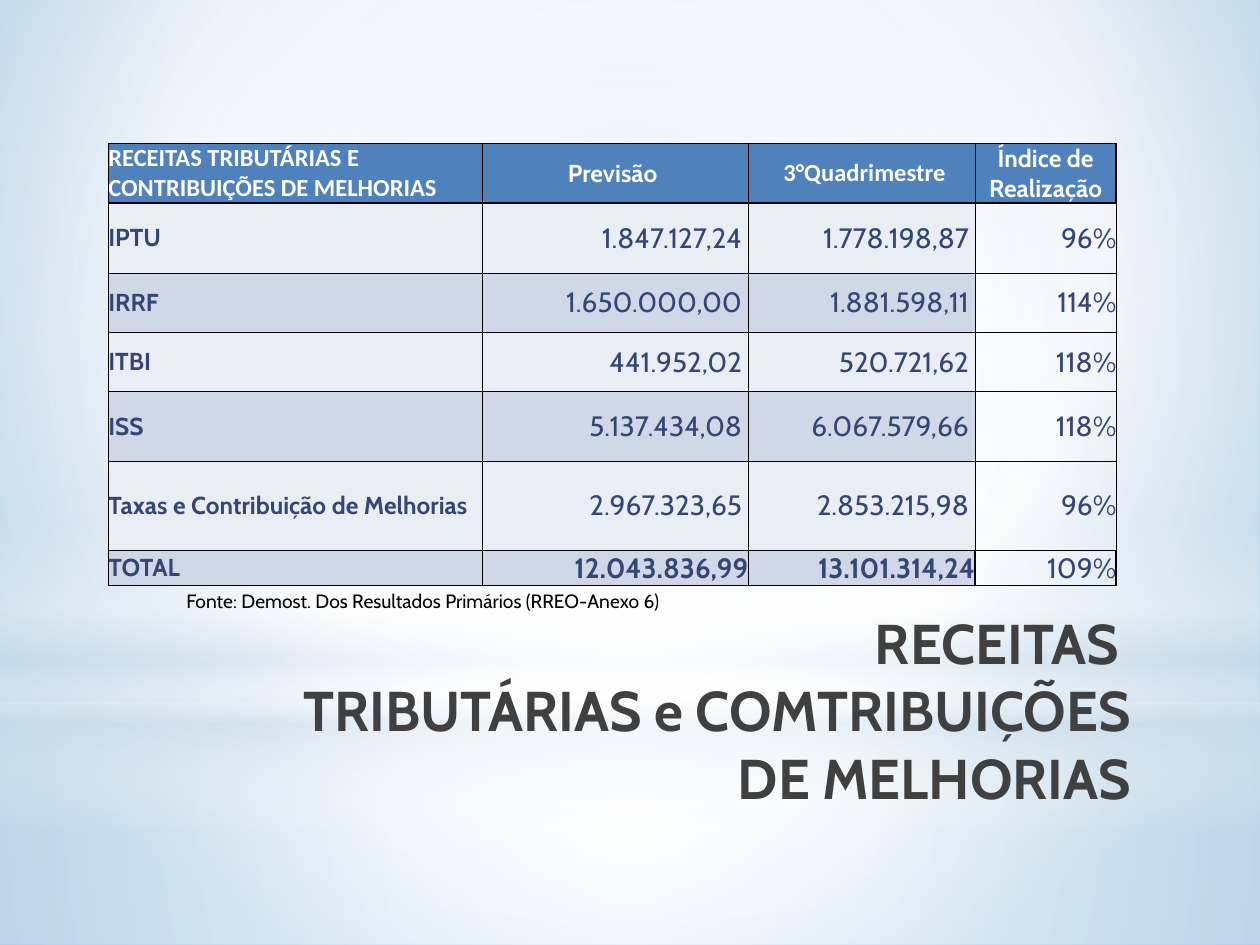
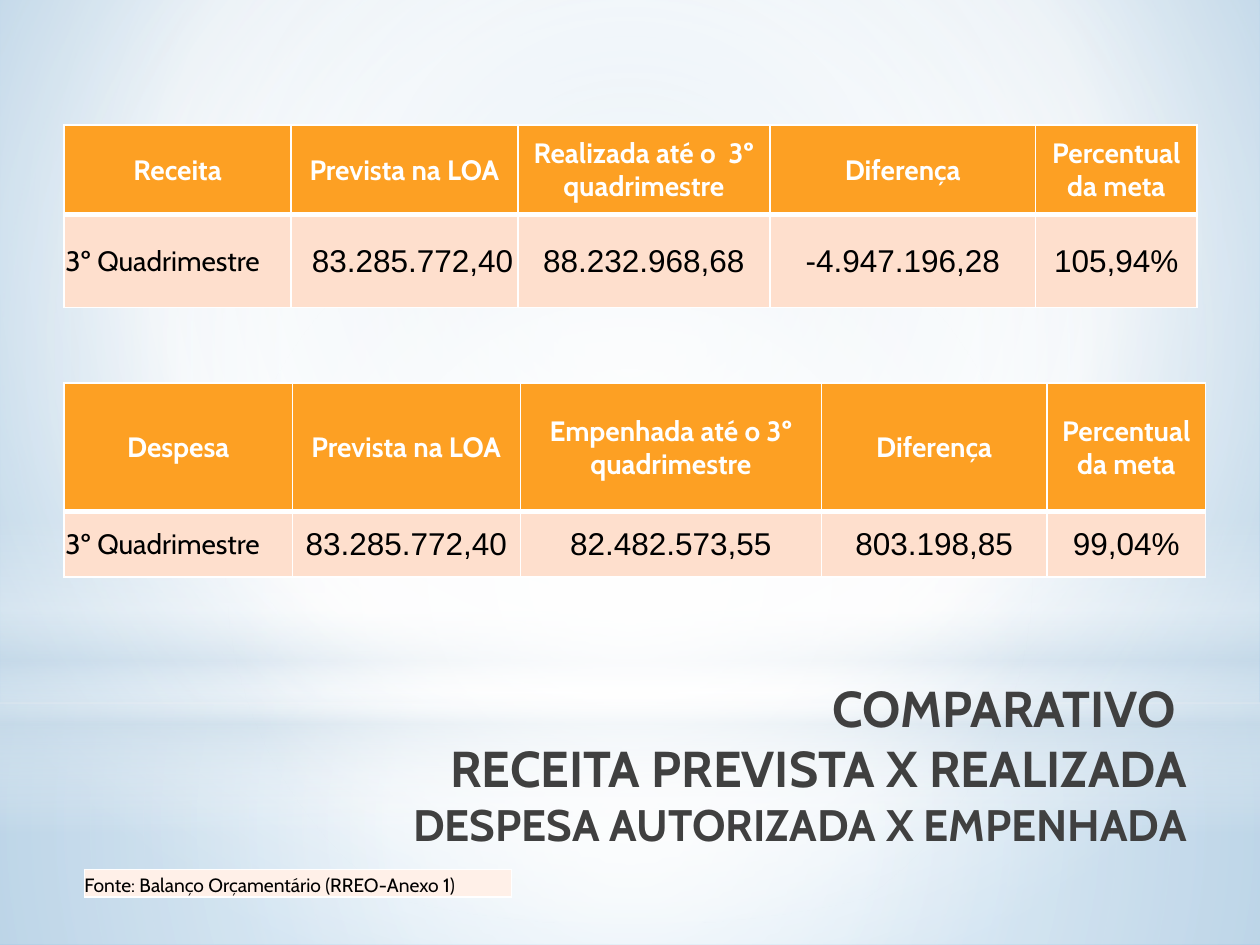
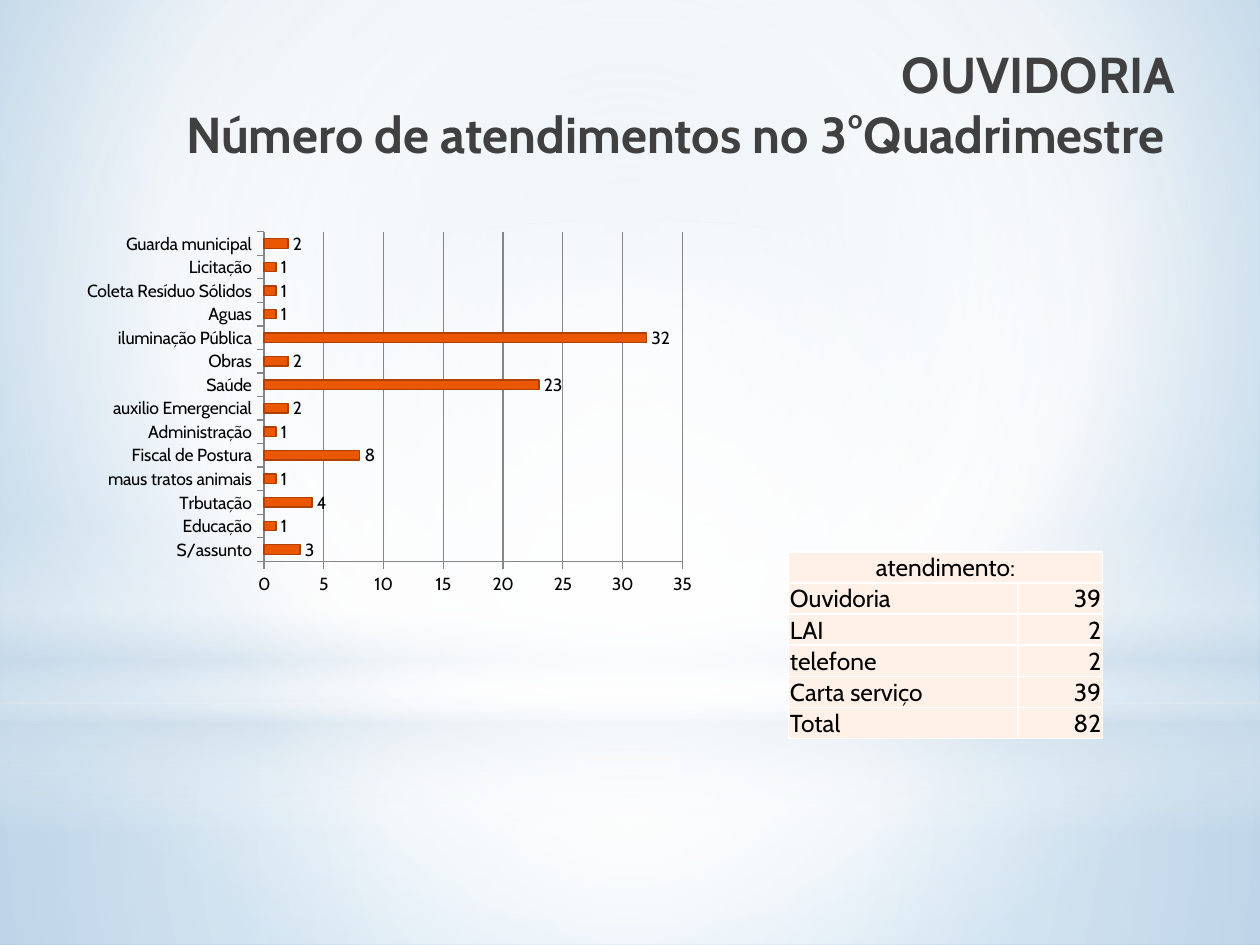
from dataclasses import dataclass

from lxml.etree import SubElement
from pptx import Presentation
from pptx.chart.data import CategoryChartData
from pptx.dml.color import RGBColor
from pptx.enum.chart import XL_CHART_TYPE, XL_LABEL_POSITION, XL_TICK_MARK
from pptx.enum.shapes import MSO_SHAPE
from pptx.enum.text import MSO_ANCHOR, MSO_AUTO_SIZE, PP_ALIGN
from pptx.oxml.ns import qn
from pptx.util import Inches, Pt

COLORS = {
    "white": "FFFFFF", "black": "000000", "title": "404040",
    "sky": "BCD5E8", "deep_sky": "82B6DE", "mist": "CCDDEA",
    "blue": "4F81BD", "navy": "354675", "blue_light": "E9EDF4", "blue_mid": "D0D8E8",
    "orange": "FDA023", "peach": "FEDFCD", "cream": "FFF0E8",
    "bar": "EB5600", "bar_edge": "B04000", "grid": "868686",
}
FONT = "Cabin"
CENTRE = (50, 50, 50, 50)
LEFT, MIDDLE, RIGHT = PP_ALIGN.LEFT, PP_ALIGN.CENTER, PP_ALIGN.RIGHT


@dataclass
class CellStyle:
    """Look of one table cell; edges are left, right, top, bottom widths in points."""
    fill: str = ""
    size: float = 14
    color: str = "black"
    font: str = FONT
    bold: bool = False
    align: PP_ALIGN = LEFT
    anchor: MSO_ANCHOR = MSO_ANCHOR.MIDDLE
    edge_color: str = "white"
    edges: tuple = (1, 1, 1, 1)


def rgb(name):
    return RGBColor.from_string(COLORS[name])


def format_font(font, size, color="black", bold=False, name=FONT):
    font.name, font.size, font.bold = name, Pt(size), bold
    font.color.rgb = rgb(color)


def paint_gradient(fill, holder, stops, focus=None):
    """Fill with (position, colour, opacity) stops: around focus, or downwards without it."""
    fill.gradient()
    gradient = holder.find(".//" + qn("a:gradFill"))
    for child in list(gradient):
        gradient.remove(child)
    stop_list = SubElement(gradient, qn("a:gsLst"))
    for position, color, opacity in stops:
        stop = SubElement(stop_list, qn("a:gs"), pos=str(position * 1000))
        tint = SubElement(stop, qn("a:srgbClr"), val=COLORS[color])
        if opacity < 100:
            SubElement(tint, qn("a:alpha"), val=str(opacity * 1000))
    if focus:
        around = SubElement(gradient, qn("a:path"), path="circle")
        sides = {side: str(value * 1000) for side, value in zip("ltrb", focus)}
        SubElement(around, qn("a:fillToRect"), **sides)
    else:
        SubElement(gradient, qn("a:lin"), ang="5400000", scaled="0")


def style_master(deck, page):
    """Give the master its background, light bands and title style."""
    master = deck.slide_master
    paint_gradient(master.background.fill, master.element,
                   [(0, "sky", 100), (60, "white", 100), (100, "deep_sky", 100)],
                   (20, 10, 20, 60))
    bands = [
        (MSO_SHAPE.RECTANGLE, 5.58, 1.92, CENTRE,
         [(0, "white", 91), (37, "white", 76), (100, "mist", 79)]),
        (MSO_SHAPE.RECTANGLE, 0, 5.58, CENTRE,
         [(0, "white", 89), (48, "white", 62), (100, "mist", 79)]),
        (MSO_SHAPE.RECTANGLE, 4.12, 2.5, None,
         [(0, "white", 0), (29, "white", 30), (45, "mist", 40),
          (55, "white", 26), (65, "mist", 60), (100, "white", 0)]),
        (MSO_SHAPE.OVAL, 1.75, 5.58, CENTRE, [(0, "white", 100), (56, "white", 0)]),
    ]
    tree = master.element.cSld.spTree
    for order, (kind, top, height, focus, stops) in enumerate(bands):
        band = page.shapes.add_shape(kind, 0, Inches(top), deck.slide_width, Inches(height))
        band.shadow.inherit = False
        band.line.fill.background()
        paint_gradient(band.fill, band.element, stops, focus)
        tree.insert(2 + order, band.element)

    level = master.element.find(".//" + qn("p:titleStyle")).find(qn("a:lvl1pPr"))
    level.set("algn", "r")
    letters = level.find(qn("a:defRPr"))
    letters.set("sz", "2880")
    letters.set("b", "1")
    letters.find(qn("a:latin")).set("typeface", FONT)
    solid = letters.find(qn("a:solidFill"))
    solid.remove(solid[0])
    SubElement(solid, qn("a:srgbClr"), val=COLORS["title"])


def set_title(page, text, left, top, width, height):
    title = page.shapes.title
    title.left, title.top = Inches(left), Inches(top)
    title.width, title.height = Inches(width), Inches(height)
    frame = title.text_frame
    frame.text = text
    frame.vertical_anchor = MSO_ANCHOR.TOP
    frame.auto_size = MSO_AUTO_SIZE.NONE
    return frame.paragraphs[0].runs


def add_source_note(page, text, left, top, width, height):
    box = page.shapes.add_textbox(Inches(left), Inches(top), Inches(width), Inches(height))
    frame = box.text_frame
    frame.word_wrap = True
    frame.auto_size = MSO_AUTO_SIZE.SHAPE_TO_FIT_TEXT
    frame.text = text
    format_font(frame.paragraphs[0].runs[0].font, 11)


def draw_edges(cell, color, widths):
    properties = cell._tc.get_or_add_tcPr()
    for order, (side, width) in enumerate(zip("LRTB", widths)):
        line = properties.makeelement(qn(f"a:ln{side}"), {"w": str(Pt(width))})
        SubElement(SubElement(line, qn("a:solidFill")), qn("a:srgbClr"), val=COLORS[color])
        properties.insert(order, line)


def style_cell(cell, text, style, margin):
    cell.margin_left = cell.margin_right = cell.margin_top = Inches(margin)
    cell.margin_bottom = 0
    cell.vertical_anchor = style.anchor
    if style.fill:
        cell.fill.solid()
        cell.fill.fore_color.rgb = rgb(style.fill)
    else:
        cell.fill.background()
    draw_edges(cell, style.edge_color, style.edges)
    para = cell.text_frame.paragraphs[0]
    para.text = text
    para.alignment = style.align
    format_font(para.font, style.size, style.color, style.bold, style.font)
    for span in para.runs:
        format_font(span.font, style.size, style.color, style.bold, style.font)


def add_grid(page, left, top, widths, heights, rows, style_at, margin=0.01):
    """Add a table whose cells look as style_at(row, column) says."""
    frame = page.shapes.add_table(len(rows), len(widths), Inches(left), Inches(top),
                                  Inches(sum(widths)), Inches(sum(heights)))
    table = frame.table
    for column, width in zip(table.columns, widths):
        column.width = Inches(width)
    for row, height in zip(table.rows, heights):
        row.height = Inches(height)
    for r, texts in enumerate(rows):
        for c, text in enumerate(texts):
            style_cell(table.cell(r, c), text, style_at(r, c), margin)
    return table


def tax_style(row, column):
    total = row == 6
    look = CellStyle(edge_color="black", edges=(
        1 if column == 0 or (total and column == 3) else 0.5,
        1 if column == 3 and row in (0, 6) else 0.5,
        1 if row in (0, 1, 6) else 0.5,
        1 if row in (0, 5, 6) else 0.5))
    if row == 0:
        look.fill, look.color, look.bold = "blue", "white", True
        look.font = "Calibri" if column in (0, 2) else FONT
        look.align = MIDDLE if column else LEFT
    else:
        look.color = "navy"
        look.bold = column == 0 or (total and column < 3)
        look.size = 16 if column else 14
        look.align = RIGHT if column else LEFT
        if column < 3:
            look.fill = "blue_light" if row % 2 else "blue_mid"
    if (row, column) in ((0, 0), (0, 3), (6, 3)):
        look.anchor = MSO_ANCHOR.BOTTOM
    return look


def comparison_style(row, column):
    if row == 0:
        return CellStyle("orange", 16, "white", bold=True, align=MIDDLE, edges=(1, 1, 1, 3))
    if column == 0:
        return CellStyle("peach", 16)
    return CellStyle("peach", 18, font="Arial", align=MIDDLE)


def service_style(row, column):
    align = MIDDLE if row == 0 else RIGHT if column else LEFT
    return CellStyle("cream", align=align, anchor=MSO_ANCHOR.BOTTOM)


def source_style(row, column):
    return CellStyle("cream", 11, anchor=MSO_ANCHOR.BOTTOM)


def style_axis(axis):
    axis.format.line.color.rgb = rgb("grid")
    axis.major_tick_mark = XL_TICK_MARK.OUTSIDE
    axis.minor_tick_mark = XL_TICK_MARK.NONE


def add_bar_chart(page, counts, left, top, width, height):
    data = CategoryChartData()
    data.categories = list(counts)
    data.add_series("Series 1", list(counts.values()))
    chart = page.shapes.add_chart(XL_CHART_TYPE.BAR_CLUSTERED, Inches(left), Inches(top),
                                  Inches(width), Inches(height), data).chart
    chart.has_legend = chart.has_title = False
    format_font(chart.font, 10)
    style_axis(chart.category_axis)
    style_axis(chart.value_axis)
    chart.category_axis.has_major_gridlines = False
    scale = chart.value_axis
    scale.minimum_scale, scale.maximum_scale, scale.major_unit = 0, 35, 5
    scale.has_major_gridlines = True
    scale.major_gridlines.format.line.color.rgb = rgb("grid")
    plot = chart.plots[0]
    plot.gap_width = 150
    plot.vary_by_categories = False
    plot.has_data_labels = True
    plot.data_labels.show_value = True
    plot.data_labels.position = XL_LABEL_POSITION.OUTSIDE_END
    format_font(plot.data_labels.font, 10)
    bars = plot.series[0].format
    bars.fill.solid()
    bars.fill.fore_color.rgb = rgb("bar")
    bars.line.color.rgb = rgb("bar_edge")
    bars.line.width = Pt(0.75)


def build_tax_slide(page):
    for span in set_title(page, "RECEITAS \vTRIBUTÁRIAS e COMTRIBUIÇÕES DE MELHORIAS",
                          1.96, 4.78, 7.12, 1.25):
        span.font.size = Pt(32)
    add_source_note(page, "Fonte: Demost. Dos Resultados Primários (RREO-Anexo 6)",
                    1.38, 4.63, 6.85, 0.29)
    rows = [
        ("RECEITAS TRIBUTÁRIAS E CONTRIBUIÇÕES DE MELHORIAS", "Previsão ",
         " 3°Quadrimestre", "Índice de Realização"),
        ("IPTU", "1.847.127,24 ", "1.778.198,87 ", "96%"),
        ("IRRF", "1.650.000,00 ", "1.881.598,11 ", "114%"),
        ("ITBI", "441.952,02 ", "520.721,62 ", "118%"),
        ("ISS", "5.137.434,08 ", "6.067.579,66 ", "118%"),
        ("Taxas e Contribuição de Melhorias", "2.967.323,65 ", "2.853.215,98 ", "96%"),
        ("TOTAL", "12.043.836,99", "13.101.314,24", "109%"),
    ]
    add_grid(page, 0.86, 1.14, (2.97, 2.11, 1.8, 1.12),
             (0.47, 0.56, 0.47, 0.47, 0.55, 0.71, 0.28), rows, tax_style, margin=0)


def build_comparison_slide(page):
    spans = set_title(page, "COMPARATIVO \vRECEITA PREVISTA X REALIZADA\v"
                      "DESPESA AUTORIZADA X EMPENHADA", 2.4, 5.32, 7.12, 1.25)
    spans[-1].font.size = Pt(25.2)
    income = add_grid(
        page, 0.51, 0.99, (1.8, 1.8, 2, 2.11, 1.28), (0.71, 0.74),
        [("Receita", "Prevista na LOA", "Realizada até o  3º quadrimestre",
          "Diferença", "Percentual da meta"),
         ("3º Quadrimestre", "83.285.772,40", "88.232.968,68", "-4.947.196,28", "105,94%")],
        comparison_style)
    income.cell(1, 1).margin_left = Inches(0.14)
    add_grid(page, 0.67, 6.9, (3.39,), (0.22,),
             [("Fonte: Balanço Orçamentário (RREO-Anexo 1)",)], source_style, margin=0)
    add_grid(
        page, 0.51, 3.04, (1.81, 1.81, 2.39, 1.79, 1.26), (1.02, 0.52),
        [("Despesa", "Prevista na LOA", "Empenhada até o 3º quadrimestre",
          "Diferença", "Percentual da meta"),
         ("3º Quadrimestre", "83.285.772,40", "82.482.573,55", "803.198,85", "99,04%")],
        comparison_style)


def build_ombudsman_slide(page):
    set_title(page, "OUVIDORIA\vNúmero de atendimentos no 3°Quadrimestre ",
              0.35, 0.29, 9.08, 1.23)
    counts = {
        "S/assunto": 3, "Educação": 1, "Trbutação": 4, "maus tratos animais": 1,
        "Fiscal de Postura": 8, "Administração": 1, "auxilio Emergencial": 2,
        "Saúde": 23, "Obras": 2, "iluminação Pública": 32, "Aguas": 1,
        "Coleta Resíduo Sólidos": 1, "Licitação": 1, "Guarda municipal": 2,
    }
    add_bar_chart(page, counts, 0.59, 1.78, 5, 3)
    rows = [("atendimento:", ""), ("Ouvidoria", "39"), ("LAI", "2"), ("telefone", "2"),
            ("Carta serviço", "39"), ("Total", "82")]
    services = add_grid(page, 6.26, 4.38, (1.82, 0.67), (0.24,) * 6, rows, service_style)
    services.cell(0, 0).merge(services.cell(0, 1))


def main():
    deck = Presentation()
    deck.slide_width, deck.slide_height = Inches(10), Inches(7.5)
    title_only = deck.slide_layouts[5]
    builders = (build_tax_slide, build_comparison_slide, build_ombudsman_slide)
    pages = [deck.slides.add_slide(title_only) for _ in builders]
    style_master(deck, pages[0])
    for build, page in zip(builders, pages):
        build(page)
    deck.save("out.pptx")


if __name__ == "__main__":
    main()
